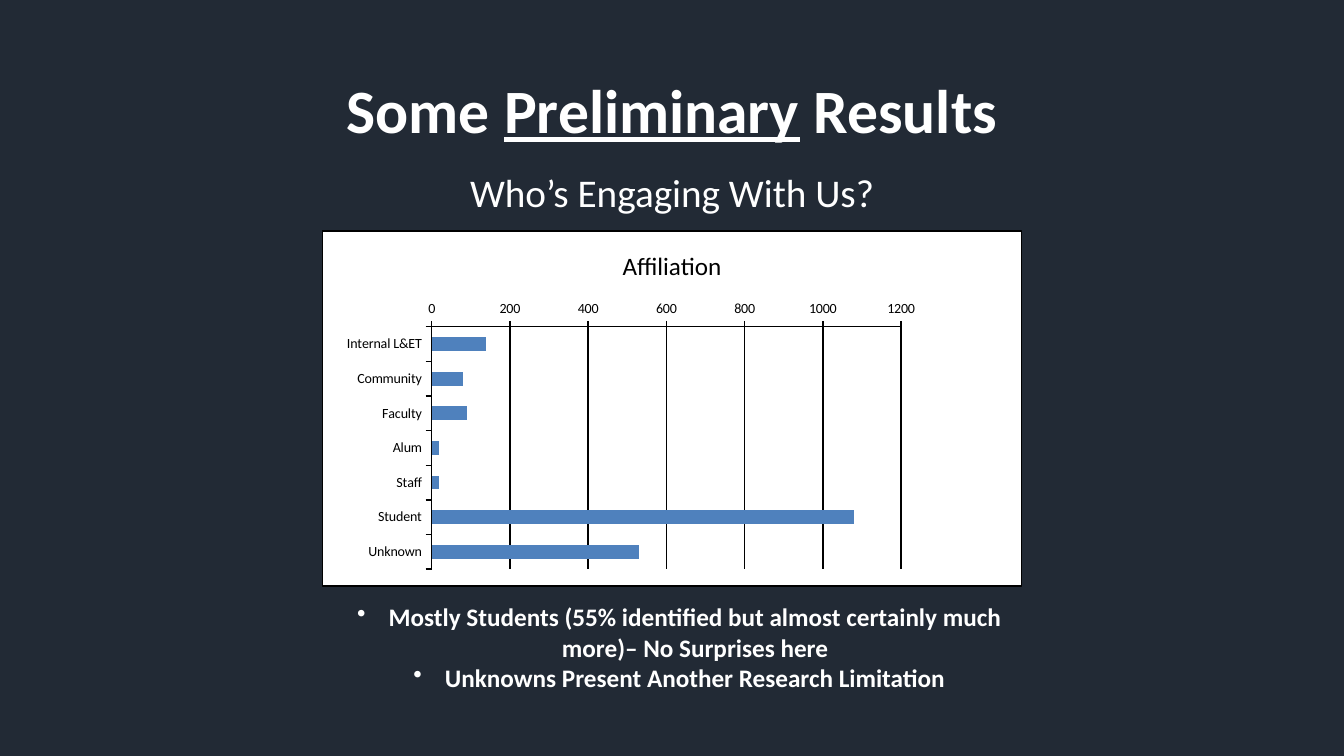
import pptx
import pptx.chart.data
import pptx.dml.color
import pptx.enum.chart
import pptx.enum.text
import pptx.oxml
import pptx.oxml.ns
import pptx.util

Pt = pptx.util.Pt
ALIGN = pptx.enum.text.PP_ALIGN
COLOURS = {"night": "222A35", "white": "FFFFFF", "black": "000000", "bar": "4F81BD"}
AFFILIATIONS = {
    "Internal L&ET": 140,
    "Community": 80,
    "Faculty": 90,
    "Alum": 20,
    "Staff": 20,
    "Student": 1080,
    "Unknown": 530,
}
FINDINGS = [
    "Mostly Students (55% identified but almost certainly much more)– No Surprises here",
    "Unknowns Present Another Research Limitation",
]


def colour(name):
    return pptx.dml.color.RGBColor.from_string(COLOURS[name])


def chart_element(markup):
    spaces = pptx.oxml.ns.nsdecls("c", "a")
    return pptx.oxml.parse_xml(f"<c:root {spaces}>{markup}</c:root>")[0]


class Page:
    typeface = "Calibri"

    def __init__(self, deck):
        self.slide = deck.slides.add_slide(deck.slide_layouts[1])
        fill = self.slide.background.fill
        fill.solid()
        fill.fore_color.rgb = colour("night")

    def style(self, font, size, ink="white", bold=False):
        font.name = self.typeface
        font.size = Pt(size)
        font.bold = bold
        font.color.rgb = colour(ink)

    def bullet(self, para, indent, symbol=None):
        properties = para._p.get_or_add_pPr()
        properties.set("marL", str(Pt(indent)))
        properties.set("indent", str(-Pt(indent)))
        mark = f'<a:buChar {pptx.oxml.ns.nsdecls("a")} char="{symbol}"/>'
        if symbol is None:
            mark = f'<a:buNone {pptx.oxml.ns.nsdecls("a")}/>'
        properties.append(pptx.oxml.parse_xml(mark))

    def placeholder(self, index, bounds, size, spans, anchor, before=0, bold=False):
        box = self.slide.placeholders[index]
        box.left, box.top, box.width, box.height = map(Pt, bounds)
        frame = box.text_frame
        frame.auto_size = pptx.enum.text.MSO_AUTO_SIZE.NONE
        frame.vertical_anchor = anchor
        para = frame.paragraphs[0]
        para.alignment = ALIGN.CENTER
        para.line_spacing = 0.9
        para.space_before = Pt(before)
        self.style(para.font, size, bold=bold)
        self.bullet(para, 0)
        for text, underlined in spans:
            span = para.add_run()
            span.text = text
            if underlined:
                span.font.underline = True

    def bullets(self, bounds, size, lines):
        frame = self.slide.shapes.add_textbox(*map(Pt, bounds)).text_frame
        frame.word_wrap = True
        frame.auto_size = pptx.enum.text.MSO_AUTO_SIZE.SHAPE_TO_FIT_TEXT
        for position, line in enumerate(lines):
            para = frame.add_paragraph() if position else frame.paragraphs[0]
            para.text = line
            para.alignment = ALIGN.CENTER
            self.style(para.font, size, bold=True)
            self.bullet(para, 22.5, "•")

    def axis(self, axis):
        axis.major_tick_mark = pptx.enum.chart.XL_TICK_MARK.OUTSIDE
        axis.minor_tick_mark = pptx.enum.chart.XL_TICK_MARK.NONE
        self.style(axis.tick_labels.font, 10, "black")
        self.line(axis.format.line)

    def line(self, line):
        line.color.rgb = colour("black")
        line.width = Pt(1)

    def bar_chart(self, bounds, heading, values, plot):
        data = pptx.chart.data.CategoryChartData()
        data.categories = list(values)
        data.add_series(heading, list(values.values()))
        kind = pptx.enum.chart.XL_CHART_TYPE.BAR_CLUSTERED
        chart = self.slide.shapes.add_chart(kind, *map(Pt, bounds), data).chart
        chart.has_legend = False
        self.style(chart.font, 10, "black")
        chart.has_title = True
        title = chart.chart_title
        title.include_in_layout = False
        title.text_frame.text = heading
        self.style(title.text_frame.paragraphs[0].font, 18, "black")

        bars = chart.plots[0]
        bars.gap_width = 150
        bars.vary_by_categories = False
        fill = bars.series[0].format.fill
        fill.solid()
        fill.fore_color.rgb = colour("bar")

        self.axis(chart.category_axis)
        chart.category_axis.reverse_order = True
        scale = chart.value_axis
        self.axis(scale)
        scale.minimum_scale, scale.maximum_scale, scale.major_unit = 0, 1200, 200
        scale.has_major_gridlines = True
        self.line(scale.major_gridlines.format.line)
        self.chart_area(chart, plot)

    def chart_area(self, chart, plot):
        body = chart._chartSpace.chart
        area = body.plotArea
        for layout in area.findall(pptx.oxml.ns.qn("c:layout")):
            area.remove(layout)
        sizes = "".join(f'<c:{key} val="{value}"/>' for key, value in zip("xywh", plot))
        area.insert(0, chart_element(
            '<c:layout><c:manualLayout><c:layoutTarget val="inner"/>'
            f'<c:xMode val="edge"/><c:yMode val="edge"/>{sizes}'
            "</c:manualLayout></c:layout>"))
        white = f'<a:solidFill><a:srgbClr val="{COLOURS["white"]}"/></a:solidFill>'
        black = f'<a:solidFill><a:srgbClr val="{COLOURS["black"]}"/></a:solidFill>'
        area.append(chart_element(f"<c:spPr>{white}<a:ln><a:noFill/></a:ln></c:spPr>"))
        body.addnext(chart_element(
            f'<c:spPr>{white}<a:ln w="{Pt(1)}">{black}</a:ln></c:spPr>'))


def main():
    deck = pptx.Presentation()
    deck.slide_width, deck.slide_height = Pt(960), Pt(540)
    page = Page(deck)
    anchors = pptx.enum.text.MSO_ANCHOR
    page.placeholder(
        0, (66, 28.8, 828, 104.4), 44,
        [("Some ", False), ("Preliminary", True), (" Results", False)],
        anchors.MIDDLE, bold=True)
    page.placeholder(
        1, (66, 120.2, 828, 342.7), 28,
        [("Who’s Engaging With Us?", False)], anchors.TOP, before=10)
    page.bar_chart(
        (230, 164.5, 500, 254.5), "Affiliation", AFFILIATIONS,
        (0.156, 0.27, 0.672, 0.683))
    page.bullets((240.5, 426.2, 489.6, 72.7), 18, FINDINGS)
    deck.save("out.pptx")


if __name__ == "__main__":
    main()
